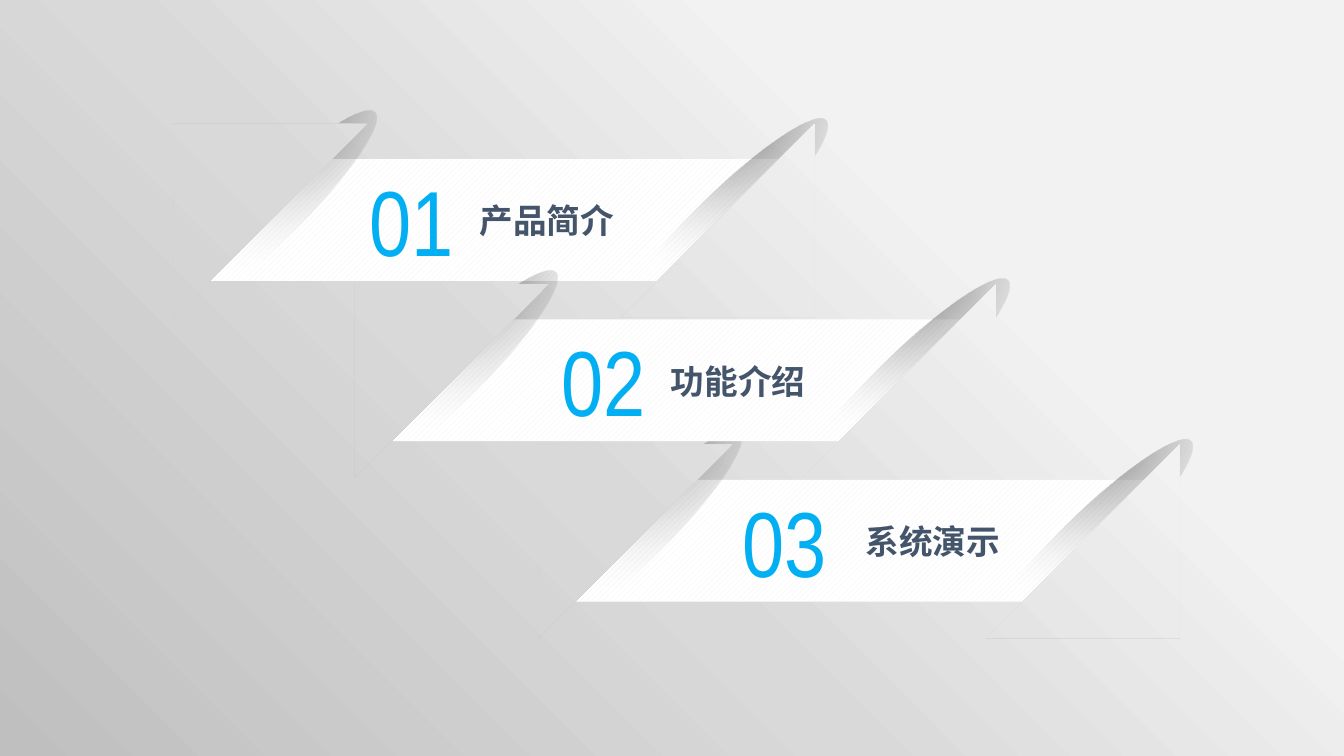
from pptx import Presentation
from pptx.dml.color import RGBColor
from pptx.enum import dml, shapes, text
from pptx.oxml import parse_xml
from pptx.oxml.ns import nsdecls, qn
from pptx.util import Cm, Pt

BLUE = RGBColor(0x02, 0xAF, 0xF3)
SLATE = RGBColor(0x44, 0x54, 0x6A)
PALE = RGBColor(0xF2, 0xF2, 0xF2)
WHITE = RGBColor(0xFF, 0xFF, 0xFF)
# Gradient stops: position, colour, opacity
BACK = [(9, PALE, 100), (29, PALE, 100),
        (59, RGBColor(0xD9, 0xD9, 0xD9), 100), (100, RGBColor(0xBF, 0xBF, 0xBF), 100)]
SHADE = [(0, RGBColor(0x40, 0x40, 0x40), 40), (32, RGBColor(0, 0, 0), 30),
         (100, RGBColor(0xE7, 0xE6, 0xE6), 0)]


def radial(stops, l, t, r, b):
    """Return a circular gradient fill element."""
    gs = "".join(
        f'<a:gs pos="{pos * 1000}"><a:srgbClr val="{color}">'
        f'<a:alpha val="{alpha * 1000}"/></a:srgbClr></a:gs>'
        for pos, color, alpha in stops)
    return parse_xml(
        f'<a:gradFill {nsdecls("a")} rotWithShape="1"><a:gsLst>{gs}</a:gsLst>'
        f'<a:path path="circle"><a:fillToRect l="{l * 1000}" t="{t * 1000}" '
        f'r="{r * 1000}" b="{b * 1000}"/></a:path></a:gradFill>')


def write(group, words, x, y, w, h, size, font, color, bold=False, edge=None):
    """Add a one-line text box, with an outline colour if given."""
    box = group.shapes.add_textbox(Cm(x), Cm(y), Cm(w), Cm(h))
    frame = box.text_frame
    frame.word_wrap = False
    frame.auto_size = text.MSO_AUTO_SIZE.SHAPE_TO_FIT_TEXT
    run = frame.paragraphs[0].add_run()
    run.text = words
    run.font.size, run.font.name, run.font.bold = Pt(size), font, bold
    run.font.color.rgb = color
    props = run.font._element
    props.find(qn("a:latin")).addnext(
        parse_xml(f'<a:ea {nsdecls("a")} typeface="{font}"/>'))
    if edge is not None:
        props.insert(0, parse_xml(
            f'<a:ln {nsdecls("a")} w="{Pt(2.25)}"><a:solidFill>'
            f'<a:srgbClr val="{edge}"/></a:solidFill></a:ln>'))


prs = Presentation()
prs.slide_width, prs.slide_height = Cm(33.87), Cm(19.05)
slide = prs.slides.add_slide(prs.slide_layouts[6])

# Background, light at the top right
slide.background.fill.background()
blank = slide.background._cSld.bg.bgPr.find(qn("a:noFill"))
blank.getparent().replace(blank, radial(BACK, 100, 0, 0, 100))

# Banners from back to front: row, left, number offset and width, label offset
BANNERS = [
    (0, 4.85, "01", 4.22, 2.67, "产品简介", 6.99),
    (2, 14.05, "03", 4.42, 3.02, "系统演示", 7.52),
    (1, 9.42, "02", 4.47, 2.95, "功能介绍", 7.24),
]
TOP, STEP, WIDE, HIGH = 4.01, 4.04, 14.88, 3.07
SHAPE = shapes.MSO_SHAPE
# Each end of a banner: ellipse x, y, turn, then triangle x, turn
ENDS = [(-1.82, 0.74, 315.5, -0.48, 90), (9.55, 0.94, 135.5, 10.8, 270)]

for row, left, num, numx, numw, label, labx in BANNERS:
    top = TOP + row * STEP
    group = slide.shapes.add_group_shape()

    # Striped bar
    bar = group.shapes.add_shape(SHAPE.RECTANGLE, Cm(left), Cm(top), Cm(WIDE), Cm(HIGH))
    bar.shadow.inherit = False
    bar.line.fill.background()
    bar.fill.patterned()
    bar.fill.pattern = dml.MSO_PATTERN.WIDE_UPWARD_DIAGONAL
    bar.fill.fore_color.rgb = PALE
    bar.fill.back_color.rgb = WHITE

    # Label and number
    write(group, label, left + labx, top + 0.91, 3.94, 1.27,
          24, "Noto Sans CJK SC", SLATE, bold=True)
    write(group, num, left + numx, top, numw, HIGH,
          66, "Arial Narrow", BLUE, edge=WHITE)

    # Soft shade and slanted corner at both ends
    for ex, ey, turn, tx, spin in ENDS:
        shade = group.shapes.add_shape(
            SHAPE.OVAL, Cm(left + ex), Cm(top + ey), Cm(7.49), Cm(1.42))
        shade.rotation = turn
        corner = group.shapes.add_shape(
            SHAPE.RIGHT_TRIANGLE, Cm(left + tx), Cm(top - 0.89), Cm(4.88), Cm(4.88))
        corner.rotation = spin
        for item in (shade, corner):
            item.shadow.inherit = False
            item.line.fill.background()
        shade.fill.background()
        blank = shade._element.spPr.find(qn("a:noFill"))
        blank.getparent().replace(blank, radial(SHADE, 50, -80, 50, 180))
        # The corner shows the slide background
        corner._element.set("useBgFill", "1")
        corner._element.remove(corner._element.find(qn("p:style")))

prs.save("out.pptx")
